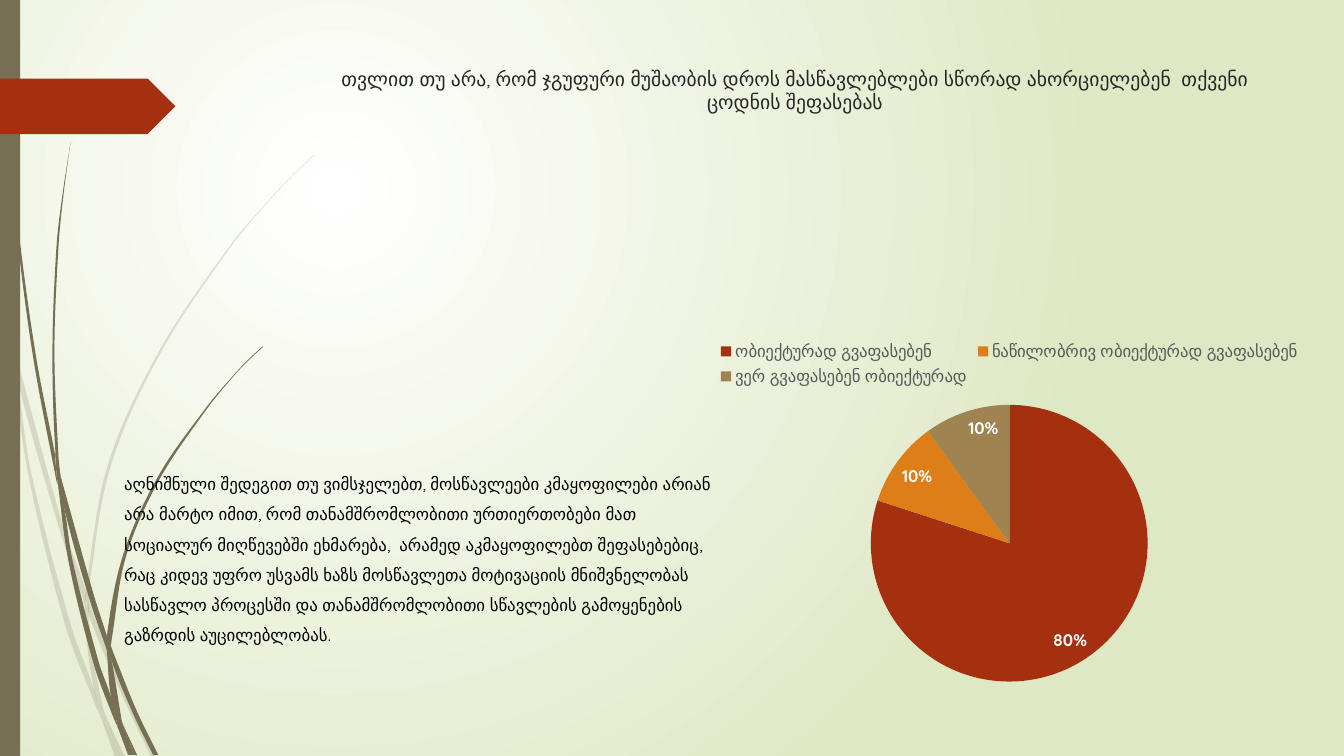
import math

import pptx
import pptx.chart.data
import pptx.dml.color
import pptx.enum.chart
import pptx.enum.shapes
import pptx.enum.text
import pptx.oxml.ns
import pptx.util
from lxml import etree

Inches, Pt, qn = pptx.util.Inches, pptx.util.Pt, pptx.oxml.ns.qn
FONT, OLIVE, RUST = "Quicksand", "766F54", "A53010"


def color(value):
    return pptx.dml.color.RGBColor.from_string(value)


def handle(before, knot, after, target):
    """Bezier handle from a knot towards a neighbour; sharp corners stay sharp."""
    reach = math.dist(knot, target) / 3
    turn = math.atan2(after[1] - knot[1], after[0] - knot[0]) - math.atan2(
        knot[1] - before[1], knot[0] - before[0])
    ends = (before, after) if math.cos(turn) > 0.8 else (knot, target)
    if target == before and ends[0] == before:
        ends = ends[::-1]
    length = math.dist(*ends)
    return [k + (e - s) / length * reach for k, s, e in zip(knot, *ends)]


deck = pptx.Presentation()
deck.slide_width, deck.slide_height = Inches(13.33), Inches(7.5)
page = deck.slides.add_slide(deck.slide_layouts[1])
shapes = page.shapes
title, body = page.placeholders[0], page.placeholders[1]

# Radial background
backdrop = page.background.fill
backdrop.gradient()
for stop, value, place in zip(backdrop.gradient_stops, ("FFFFFF", "DFE8C4"), (0, 1)):
    stop.color.rgb = color(value)
    stop.position = place
gradient = next(page._element.iter(qn("a:gradFill")))
gradient.remove(gradient.find(qn("a:lin")))
circle = etree.SubElement(gradient, qn("a:path"), path="circle")
etree.SubElement(circle, qn("a:fillToRect"), l="50000", t="50000", r="100000", b="100000")

# Grass blades, each piece an outline of x, y knots
pale_grass = [
    [(0.11, 3.5), (0.09, 3.22), (0, 2.82), (0, 2.99), (0.1, 3.44)],
    [(0.58, 5.22), (0.84, 5.99), (0.85, 5.86), (0.62, 5.2), (0.14, 3.45), (0.17, 3.76)],
    [(0.92, 6.07), (0.88, 5.96), (0.88, 6.1), (1.23, 6.94), (1.5, 7.51), (1.55, 7.51),
     (1.27, 6.92)],
    [(1.19, 7.51), (1.24, 7.51), (1.05, 7.11)],
    [(0.93, 6.83), (0.7, 6.19), (0.31, 4.69), (0.17, 3.76), (0.11, 3.5), (0.28, 4.7),
     (0.65, 6.21), (0.92, 6.93), (1.01, 7.14), (0.99, 7.07)],
    [(0.84, 5.99), (0.87, 6.46), (0.93, 6.83), (0.96, 6.92), (1.05, 7.11), (1.03, 7.06),
     (0.91, 6.46), (0.88, 6.1), (0.88, 6.08)],
    [(0.88, 5.84), (1.1, 4.62), (1.6, 3.49), (2.29, 2.45), (2.68, 1.98), (2.9, 1.75),
     (3.12, 1.54), (3.12, 1.53), (2.89, 1.75), (2.68, 1.97), (2.28, 2.44), (1.58, 3.48),
     (1.07, 4.61), (0.85, 5.84), (0.85, 5.86), (0.88, 5.96)],
    [(1.01, 7.14), (1.14, 7.51), (1.19, 7.51)],
    [(0.88, 6.08), (0.88, 6.1), (0.88, 5.96), (0.85, 5.86), (0.84, 5.99)],
    [(0.96, 6.92), (0.93, 6.83), (0.99, 7.07), (1.01, 7.14), (1.19, 7.51), (1.05, 7.11)],
]
dark_grass = [
    [(0.07, 1.1), (0.17, 2.33), (0.33, 3.55), (0.56, 4.77), (0.57, 4.81), (0.55, 4.57),
     (0.55, 4.53), (0.36, 3.55), (0.19, 2.32), (0.08, 1.09), (0.05, 0.48), (0.04, 0),
     (0.03, 0), (0.04, 0.48)],
    [(0.88, 5.92), (1.06, 6.45), (1.06, 6.33), (1.06, 6.31), (0.93, 5.9), (0.6, 4.72),
     (0.64, 5.05)],
    [(1.13, 6.49), (1.1, 6.41), (1.11, 6.56), (1.32, 7.08), (1.52, 7.49), (1.57, 7.49),
     (1.36, 7.06)],
    [(1.1, 6.91), (0.98, 6.57), (0.72, 5.56), (0.64, 5.05), (0.57, 4.77), (0.68, 5.57),
     (0.93, 6.59), (1.11, 7.08), (1.17, 7.22), (1.16, 7.17)],
    [(0.6, 4.72), (0.58, 4.53), (0.54, 3.49), (0.58, 2.45), (0.63, 1.93), (0.7, 1.41),
     (0.62, 1.93), (0.56, 2.45), (0.52, 3.49), (0.55, 4.49)],
    [(1.33, 7.49), (1.36, 7.49), (1.22, 7.19)],
    [(0.57, 4.77), (0.64, 5.05), (0.6, 4.72), (0.55, 4.49), (0.55, 4.53)],
    [(1.11, 6.33), (1.25, 5.52), (1.58, 4.76), (2.05, 4.06), (2.31, 3.74), (2.45, 3.59),
     (2.61, 3.44), (2.6, 3.44), (2.45, 3.58), (2.31, 3.73), (2.04, 4.05), (1.56, 4.74),
     (1.22, 5.51), (1.06, 6.31), (1.1, 6.41)],
    [(1.17, 7.22), (1.27, 7.49), (1.31, 7.49)],
    [(1.06, 6.45), (1.1, 6.91), (1.16, 7.06), (1.22, 7.19), (1.21, 7.16), (1.11, 6.56),
     (1.09, 6.51)],
    [(1.06, 6.45), (1.09, 6.51), (1.11, 6.56), (1.1, 6.41), (1.06, 6.31), (1.06, 6.33)],
    [(1.16, 7.06), (1.1, 6.91), (1.16, 7.17), (1.17, 7.22), (1.3, 7.49), (1.33, 7.49),
     (1.22, 7.19)],
]
pieces = [(20, knots) for knots in pale_grass] + [(100, knots) for knots in dark_grass]
for opacity, knots in pieces:
    corners = [(Inches(x), Inches(y)) for x, y in knots]
    builder = shapes.build_freeform(*corners[0])
    builder.add_line_segments(corners[1:] + corners[:1], close=True)
    blade = builder.convert_to_shape()
    blade.shadow.inherit = False
    blade.line.fill.background()
    blade.fill.solid()
    blade.fill.fore_color.rgb = color(OLIVE)
    if opacity < 100:
        tint = blade._element.spPr.find(qn("a:solidFill"))[0]
        etree.SubElement(tint, qn("a:alpha"), val=str(opacity * 1000))
    count = len(corners)
    for index, side in enumerate(list(blade._element.iter(qn("a:lnTo")))):
        before, start, end, after = (corners[(index + k) % count] for k in (-1, 0, 1, 2))
        bend = etree.Element(qn("a:cubicBezTo"))
        for x, y in (handle(before, start, end, end), handle(start, end, after, start), end):
            etree.SubElement(bend, qn("a:pt"), x=str(round(x - blade.left)),
                             y=str(round(y - blade.top)))
        side.getparent().replace(side, bend)

# Side bar and arrow tab
kinds = pptx.enum.shapes.MSO_SHAPE
for kind, top, width, height, value in (
        (kinds.RECTANGLE, 0, 0.2, 7.5, OLIVE), (kinds.PENTAGON, 0.78, 1.74, 0.55, RUST)):
    panel = shapes.add_shape(kind, 0, Inches(top), Inches(width), Inches(height))
    panel.shadow.inherit = False
    panel.line.fill.background()
    panel.fill.solid()
    panel.fill.fore_color.rgb = color(value)

# Title and comment, in front of the blades
align = pptx.enum.text.PP_ALIGN
texts = [
    (title, (3.01, 0.62, 9.75, 0.72), (0.1, 0.04), 14, "262626", align.CENTER, 1.0,
     "თვლით თუ არა, რომ ჯგუფური მუშაობის დროს მასწავლებლები სწორად "
     "ახორციელებენ  თქვენი ცოდნის შეფასებას"),
    (body, (0.59, 3.99, 6.67, 2.18), (0.64, 0.61), 12, "000000", align.LEFT, 1.5,
     "აღნიშნული შედეგით თუ ვიმსჯელებთ, მოსწავლეები კმაყოფილები არიან არა მარტო "
     "იმით, რომ თანამშრომლობითი ურთიერთობები მათ სოციალურ მიღწევებში ეხმარება,  "
     "არამედ აკმაყოფილებთ შეფასებებიც, რაც კიდევ უფრო უსვამს ხაზს მოსწავლეთა "
     "მოტივაციის მნიშვნელობას სასწავლო პროცესში და თანამშრომლობითი სწავლების "
     "გამოყენების გაზრდის აუცილებლობას."),
]
for box, frame, inset, size, value, alignment, spacing, words in texts:
    box.left, box.top, box.width, box.height = map(Inches, frame)
    shapes._spTree.append(box._element)
    box.text_frame.word_wrap = True
    box.text_frame.auto_size = pptx.enum.text.MSO_AUTO_SIZE.NONE
    box.text_frame.vertical_anchor = pptx.enum.text.MSO_ANCHOR.TOP
    box.text_frame.margin_left, box.text_frame.margin_top = map(Inches, inset)
    para = box.text_frame.paragraphs[0]
    para.alignment, para.line_spacing, para.space_before = alignment, spacing, Pt(0)
    settings = para._p.get_or_add_pPr()
    settings.set("marL", "0")
    settings.set("indent", "0")
    etree.SubElement(settings, qn("a:buNone"))
    span = para.add_run()
    span.text = words
    span.font.name, span.font.size = FONT, Pt(size)
    span.font.color.rgb = color(value)

# Pie of answers
answers = [("ობიექტურად გვაფასებენ", 80, RUST),
           ("ნაწილობრივ ობიექტურად გვაფასებენ", 10, "DE7E18"),
           ("ვერ გვაფასებენ ობიექტურად", 10, "9F8351")]
data = pptx.chart.data.CategoryChartData()
data.categories = [name for name, share, value in answers]
data.add_series("Series 1", [share for name, share, value in answers])
chart = shapes.add_chart(
    pptx.enum.chart.XL_CHART_TYPE.PIE,
    Inches(6.15), Inches(3.27), Inches(7.72), Inches(3.63), data).chart
chart.has_title = False
chart.font.name, chart.font.size = FONT, Pt(10)
chart.has_legend = True
chart.legend.position = pptx.enum.chart.XL_LEGEND_POSITION.TOP
chart.legend.include_in_layout = False
plot = chart.plots[0]
plot.vary_by_categories = True
plot.has_data_labels = True
labels = plot.data_labels
labels.show_percentage, labels.show_value = True, False
labels.number_format, labels.number_format_is_linked = "0%", False
labels.position = pptx.enum.chart.XL_LABEL_POSITION.INSIDE_END
labels.font.bold = True
for part, value in ((chart.legend, "595959"), (labels, "FFFFFF")):
    part.font.name, part.font.size = FONT, Pt(12)
    part.font.color.rgb = color(value)
for index, (name, share, value) in enumerate(answers):
    wedge = plot.series[0].points[index].format.fill
    wedge.solid()
    wedge.fore_color.rgb = color(value)

deck.save("out.pptx")
